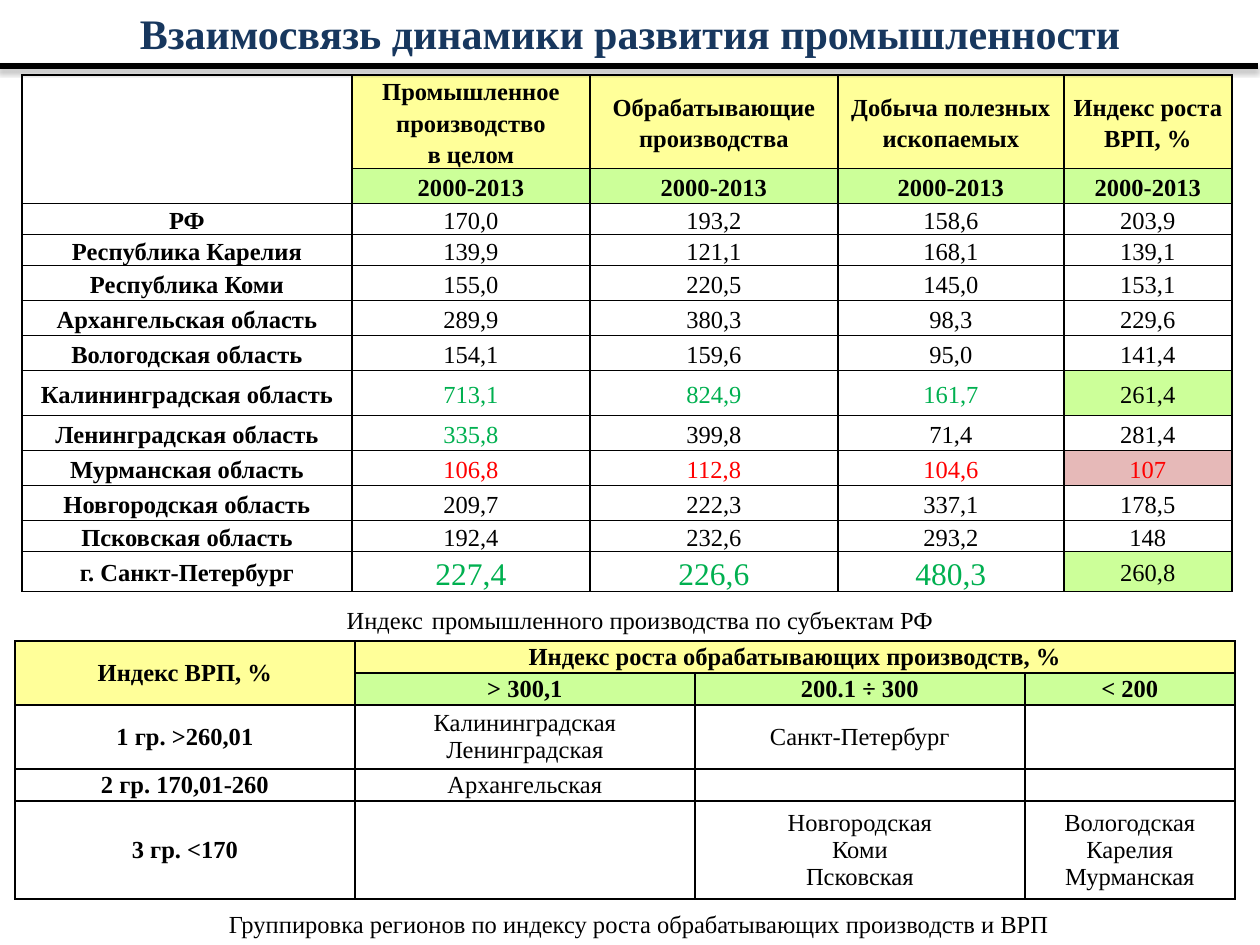
from lxml import etree
from pptx import Presentation
from pptx.dml.color import RGBColor
from pptx.enum.shapes import MSO_CONNECTOR, MSO_SHAPE
from pptx.enum.text import MSO_ANCHOR, PP_ALIGN
from pptx.oxml import parse_xml
from pptx.oxml.ns import nsdecls, qn
from pptx.util import Pt

PX = 914400 / 126
SERIF, SANS = "Times New Roman", "Arial"
CENTER, MIDDLE = PP_ALIGN.CENTER, MSO_ANCHOR.MIDDLE
STRAIGHT, RECT = MSO_CONNECTOR.STRAIGHT, MSO_SHAPE.RECTANGLE

BLACK = RGBColor(0x00, 0x00, 0x00)
WHITE = RGBColor(0xFF, 0xFF, 0xFF)
NAVY = RGBColor(0x17, 0x37, 0x5E)
YELLOW = RGBColor(0xFF, 0xFF, 0x99)
LIME = RGBColor(0xCC, 0xFF, 0x99)
PINK = RGBColor(0xE6, 0xB9, 0xB8)
GREEN = RGBColor(0x00, 0xB0, 0x50)
RED = RGBColor(0xFF, 0x00, 0x00)

INDEX_ROWS = [
    ["", "Промышленное производство\nв целом", "Обрабатывающие\nпроизводства",
     "Добыча полезных\nископаемых", "Индекс роста ВРП, %"],
    [""] + ["2000-2013"] * 4,
    ["РФ", "170,0", "193,2", "158,6", "203,9"],
    ["Республика Карелия", "139,9", "121,1", "168,1", "139,1"],
    ["Республика Коми", "155,0", "220,5", "145,0", "153,1"],
    ["Архангельская область", "289,9", "380,3", "98,3", "229,6"],
    ["Вологодская область", "154,1", "159,6", "95,0", "141,4"],
    ["Калининградская область", "713,1", "824,9", "161,7", "261,4"],
    ["Ленинградская область", "335,8", "399,8", "71,4", "281,4"],
    ["Мурманская область", "106,8", "112,8", "104,6", "107"],
    ["Новгородская область", "209,7", "222,3", "337,1", "178,5"],
    ["Псковская область", "192,4", "232,6", "293,2", "148"],
    ["г. Санкт-Петербург", "227,4", "226,6", "480,3", "260,8"],
]
INDEX_FILLS = {(7, 4): LIME, (9, 4): PINK, (12, 4): LIME}
INDEX_COLORS = {(8, 1): GREEN}
INDEX_COLORS.update({(r, c): GREEN for r in (7, 12) for c in (1, 2, 3)})
INDEX_COLORS.update({(9, c): RED for c in (1, 2, 3, 4)})
INDEX_SIZES = {(12, c): 18 for c in (1, 2, 3)}

GROUP_ROWS = [
    ["Индекс ВРП, %", "Индекс роста обрабатывающих производств, %", "", ""],
    ["", "> 300,1", "200.1 ÷ 300", "< 200"],
    ["1 гр. >260,01", "Калининградская\nЛенинградская", "Санкт-Петербург", ""],
    ["2 гр. 170,01-260", "Архангельская", "", ""],
    ["3 гр. <170", "", "Новгородская\nКоми\nПсковская",
     "Вологодская Карелия\nМурманская"],
]


def px(n):
    return round(n * PX)


def set_font(font, size=14, color=BLACK, bold=False, name=SERIF):
    font.name, font.size, font.bold = name, Pt(size), bold
    font.color.rgb = color


def add_title(s, text):
    sp = s.shapes.title
    sp.left, sp.top, sp.width, sp.height = px(0), px(-10), px(1260), px(86)
    tf = sp.text_frame
    tf.text = text
    tf.vertical_anchor = MIDDLE
    p = tf.paragraphs[0]
    p.alignment = CENTER
    set_font(p.font, 24, NAVY, True)


def set_borders(cell):
    tcPr = cell._tc.get_or_add_tcPr()
    for side in ("lnL", "lnR", "lnT", "lnB"):
        tcPr.append(parse_xml(
            f'<a:{side} {nsdecls("a")} w="12700"><a:solidFill>'
            f'<a:srgbClr val="{BLACK}"/></a:solidFill></a:{side}>'))


def format_cell(cell, text, fill, size, color, bold, spacing):
    cell.margin_left = cell.margin_right = px(9)
    cell.margin_top = cell.margin_bottom = 0
    cell.vertical_anchor = MIDDLE
    set_borders(cell)
    if fill is None:
        cell.fill.background()
    else:
        cell.fill.solid()
        cell.fill.fore_color.rgb = fill
    cell.text_frame.text = text
    for p in cell.text_frame.paragraphs:
        p.alignment = CENTER
        p.line_spacing = spacing
        set_font(p.font, size, color, bold)


def add_grid(s, left, top, widths, heights, rows, fills,
             colors=None, sizes=None, spacing=1.0):
    """Add a table with two bold header rows and a bold first column.

    fills, colors and sizes hold the exceptions, keyed by (row, column).
    """
    colors, sizes = colors or {}, sizes or {}
    frame = s.shapes.add_table(len(heights), len(widths), px(left), px(top),
                               px(sum(widths)), px(sum(heights)))
    table = frame.table
    table.first_row = table.horz_banding = False
    for column, width in zip(table.columns, widths):
        column.width = px(width)
    for row, height in zip(table.rows, heights):
        row.height = px(height)
    for r, texts in enumerate(rows):
        for c, text in enumerate(texts):
            key = (r, c)
            header = {0: YELLOW, 1: LIME}.get(r) if c else None
            format_cell(table.cell(r, c), text, fills.get(key, header),
                        sizes.get(key, 14), colors.get(key, BLACK),
                        r < 2 or c == 0, spacing)
    table.cell(0, 0).merge(table.cell(1, 0))
    return table


def add_rule(s, x1, x2, y):
    """Add the heavy line under the title, with its soft shadow."""
    line = s.shapes.add_connector(STRAIGHT, px(x1), px(y), px(x2), px(y))
    line.line.color.rgb = BLACK
    line.line.width = Pt(3)
    effects = etree.SubElement(line._element.spPr, qn("a:effectLst"))
    shadow = etree.SubElement(effects, qn("a:outerShdw"), blurRad="39400",
                              dist="22900", dir="5400000", rotWithShape="0")
    color = etree.SubElement(shadow, qn("a:srgbClr"), val=str(BLACK))
    etree.SubElement(color, qn("a:alpha"), val="35000")


def add_caption(s, left, top, width, height, runs):
    """Add a white caption box; runs are (text, size, font name)."""
    sp = s.shapes.add_shape(RECT, px(left), px(top), px(width), px(height))
    sp.shadow.inherit = False
    sp.fill.solid()
    sp.fill.fore_color.rgb = WHITE
    sp.line.color.rgb = WHITE
    sp.line.width = Pt(2)
    tf = sp.text_frame
    tf.word_wrap = True
    tf.vertical_anchor = MIDDLE
    p = tf.paragraphs[0]
    p.alignment = CENTER
    for text, size, name in runs:
        r = p.add_run()
        r.text = text
        set_font(r.font, size, name=name)


def main():
    prs = Presentation()
    prs.slide_width, prs.slide_height = px(1260), px(945)
    s = prs.slides.add_slide(prs.slide_layouts[5])

    add_title(s, "Взаимосвязь динамики развития промышленности")
    add_grid(s, 22, 75, [330, 238, 248, 226, 168],
             [92, 35, 29, 30, 35, 35, 35, 45, 35, 35, 35, 29, 35],
             INDEX_ROWS, INDEX_FILLS, INDEX_COLORS, INDEX_SIZES, 1.15)
    add_rule(s, -2, 1258, 66)
    add_caption(s, 243, 602, 794, 30, [
        ("Индекс", 14, SERIF), (" ", 18, SANS),
        ("промышленного производства по субъектам РФ", 14, SERIF)])
    groups = add_grid(s, 15, 641, [340, 340, 330, 210], [32, 32, 64, 32, 98],
                      GROUP_ROWS, {(0, 0): YELLOW})
    groups.cell(0, 1).merge(groups.cell(0, 3))
    add_caption(s, 64, 912, 1150, 23, [
        ("Группировка регионов по индексу роста обрабатывающих производств и ВРП",
         14, SERIF)])
    prs.save("out.pptx")


if __name__ == "__main__":
    main()
